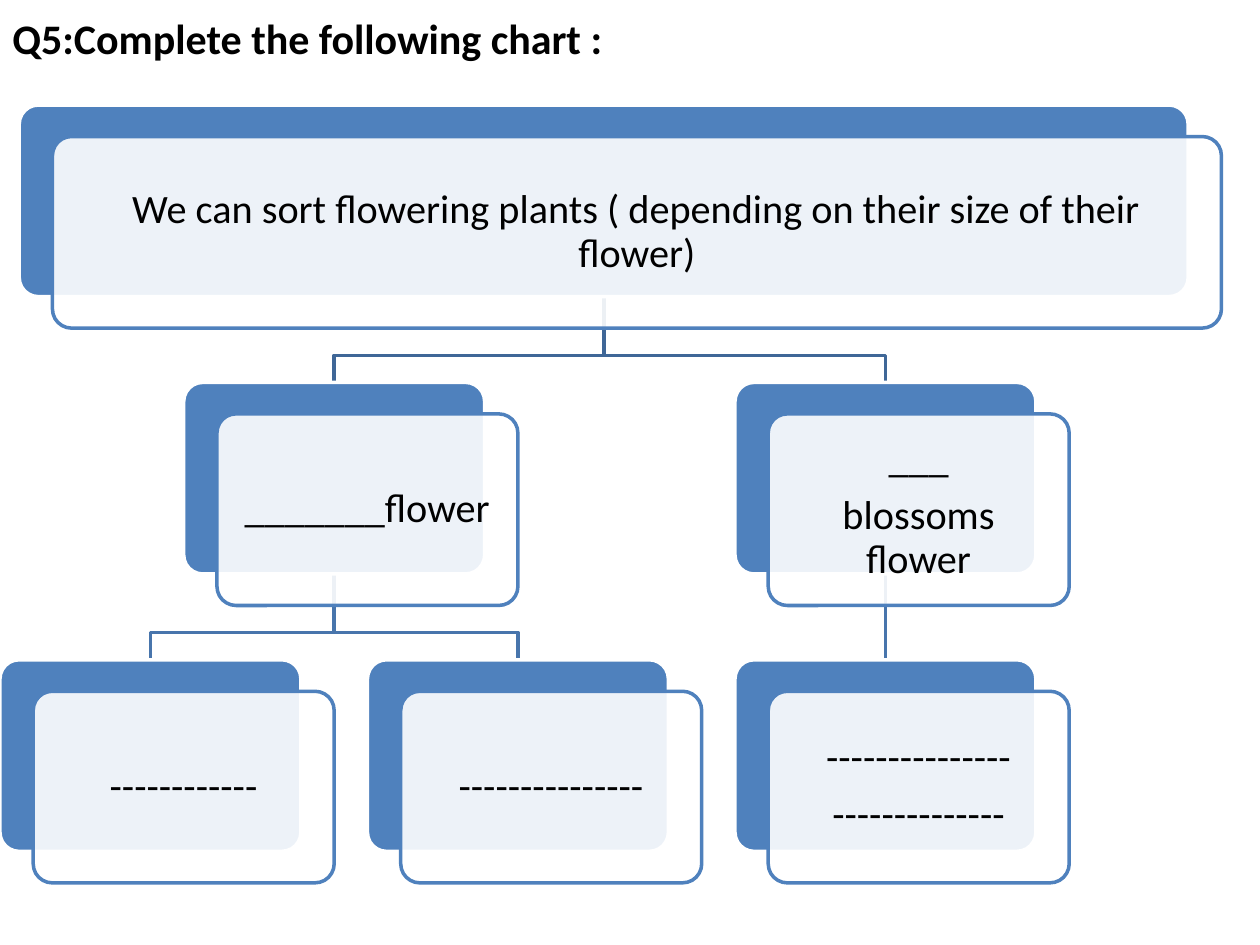
from pptx import Presentation
from pptx.dml.color import RGBColor
from pptx.enum.shapes import MSO_CONNECTOR as LINE, MSO_SHAPE as SHAPE
from pptx.enum.text import MSO_ANCHOR as ANCHOR, PP_ALIGN as ALIGN
from pptx.oxml.ns import qn
from pptx.util import Pt
from lxml.etree import SubElement

BLUE = RGBColor(0x4F, 0x81, 0xBD)
DARK = RGBColor(0x3F, 0x67, 0x97)
MID = RGBColor(0x48, 0x75, 0xAC)
WHITE = RGBColor(0xFF, 0xFF, 0xFF)
BLACK = RGBColor(0, 0, 0)

ROWS = [60, 218.5, 377]
TALL = 109.5
WIDE = 172
SHIFT = 19, 18
BEND = 33.5

# name: left, row, width, paragraphs
CARDS = {
    "root": (11, 0, 668, ["We can sort flowering plants ( depending on their size of their flower)"]),
    "single": (105, 1, WIDE, ["_______flower"]),
    "left": (0, 2, WIDE, ["------------"]),
    "middle": (210, 2, WIDE, ["---------------"]),
    "many": (420, 1, WIDE, ["___", "blossoms flower"]),
    "right": (420, 2, WIDE, ["---------------", "--------------"]),
}
ELBOWS = [
    ("root", "many", DARK),
    ("single", "middle", MID),
    ("single", "left", MID),
    ("root", "single", DARK),
]


def write(shape, lines, size, inset, bold=False, align=ALIGN.LEFT,
          anchor=ANCHOR.TOP, pitch=1.0, before=0, after=0):
    """Fill a shape with one paragraph per line."""
    frame = shape.text_frame
    frame.word_wrap = True
    frame.vertical_anchor = anchor
    frame.margin_left = frame.margin_right = Pt(inset)
    frame.margin_top = frame.margin_bottom = Pt(inset)
    for i, line in enumerate(lines):
        para = frame.add_paragraph() if i else frame.paragraphs[0]
        para.alignment = align
        para.line_spacing = pitch
        para.space_before, para.space_after = Pt(before), Pt(after)
        run = para.add_run()
        run.text = line
        run.font.name, run.font.size = "Calibri", Pt(size)
        run.font.bold, run.font.color.rgb = bold, BLACK


def panel(left, top, wide, fill, edge):
    box = slide.shapes.add_shape(
        SHAPE.ROUNDED_RECTANGLE, Pt(left), Pt(top), Pt(wide), Pt(TALL))
    box.adjustments[0] = 0.1
    box.shadow.inherit = False
    box.fill.solid()
    box.fill.fore_color.rgb = fill
    box.line.color.rgb, box.line.width = edge, Pt(2)
    return box


deck = Presentation()
deck.slide_width, deck.slide_height = Pt(720), Pt(540)
slide = deck.slides.add_slide(deck.slide_layouts[6])

title = slide.shapes.add_textbox(0, 0, Pt(720), Pt(40))
write(title, ["Q5:Complete the following chart :"], 24, 7.2, bold=True, before=4.8)

# Lines come first so that the cards cover their ends
stem = slide.shapes.add_connector(LINE.STRAIGHT, 0, 0, 0, 0)
stem.line.color.rgb, stem.line.width = MID, Pt(2)
SubElement(stem.element.spPr, qn("a:effectLst"))

for start, end, color in ELBOWS:
    x1, row, wide, _ = CARDS[start]
    x1 += wide / 2
    x2 = CARDS[end][0] + WIDE / 2
    top = ROWS[row] + TALL
    mid = top + BEND
    pen = slide.shapes.build_freeform(Pt(x1), Pt(top))
    pen.add_line_segments(
        [(Pt(x1), Pt(mid)), (Pt(x2), Pt(mid)), (Pt(x2), Pt(ROWS[row + 1]))],
        close=False)
    elbow = pen.convert_to_shape()
    elbow.shadow.inherit = False
    elbow.fill.background()
    elbow.line.color.rgb, elbow.line.width = color, Pt(2)

backs = {}
for name, (left, row, wide, lines) in CARDS.items():
    top = ROWS[row]
    backs[name] = panel(left, top, wide, BLUE, WHITE)
    front = panel(left + SHIFT[0], top + SHIFT[1], wide, WHITE, BLUE)
    tint = front.element.spPr.find(qn("a:solidFill"))[0]
    SubElement(tint, qn("a:alpha"), val="90000")
    write(front, lines, 23, 10.2, align=ALIGN.CENTER, anchor=ANCHOR.MIDDLE,
          pitch=0.9, after=8)

stem.begin_connect(backs["many"], 2)
stem.end_connect(backs["right"], 0)

deck.save("out.pptx")
